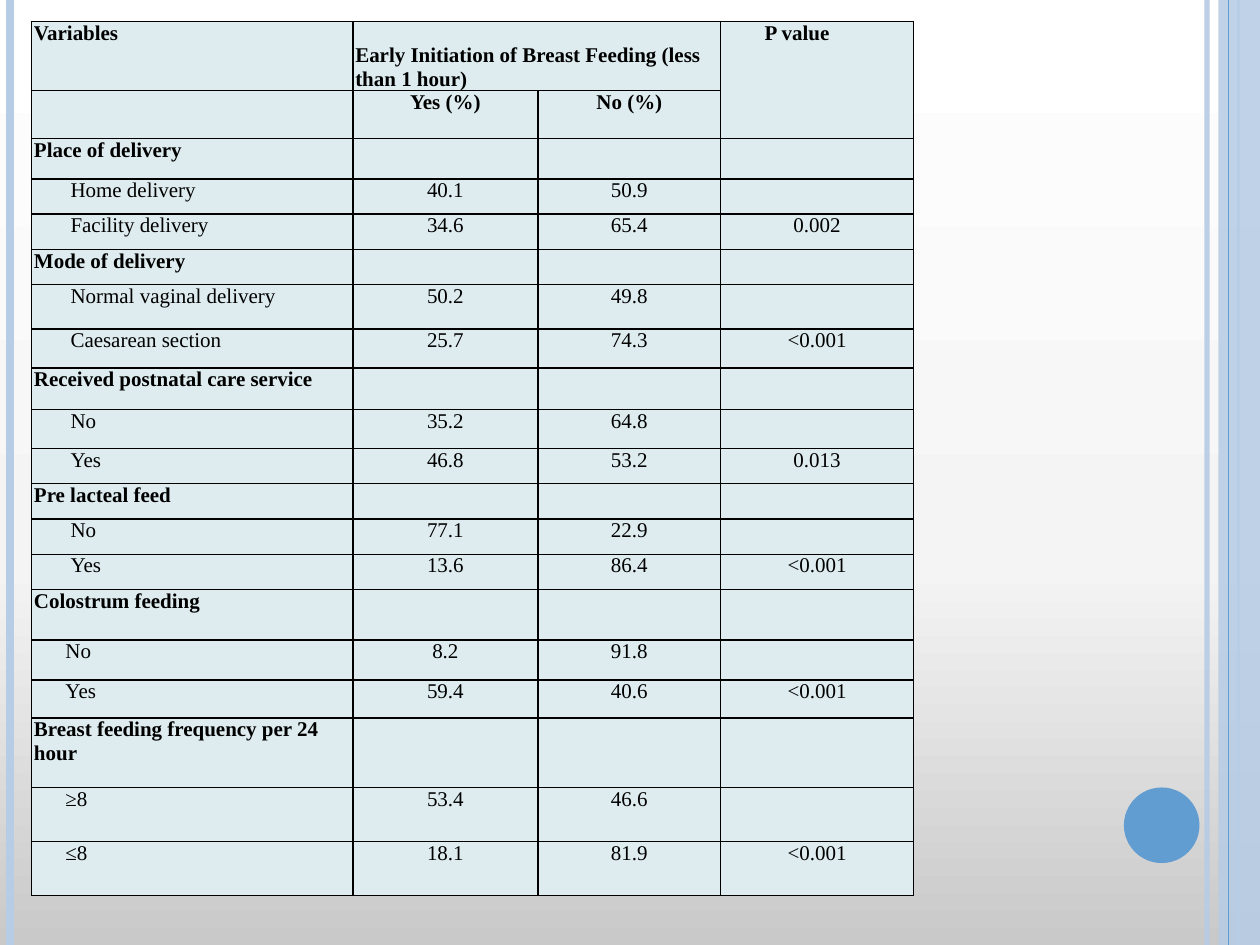
from dataclasses import dataclass

from lxml.etree import SubElement
from pptx import Presentation
from pptx.dml.color import RGBColor
from pptx.enum.shapes import MSO_CONNECTOR, MSO_SHAPE
from pptx.enum.text import MSO_ANCHOR, PP_ALIGN
from pptx.oxml import parse_xml
from pptx.oxml.ns import nsdecls, qn
from pptx.util import Inches, Pt


@dataclass(frozen=True)
class Theme:
    font: str = "Times New Roman"
    text_size: int = 12
    text: str = "000000"
    border: str = "000000"
    cell: str = "DEECEF"
    pale_blue: str = "B7CCE5"
    blue: str = "629DD1"
    background: tuple = ((0, "C9C9C9"), (40, "F4F4F4"), (100, "FFFFFF"))


THEME = Theme()
HEIGHT = 7.5
COLUMN_WIDTHS = (2.55, 1.47, 1.45, 1.53)
HEADER_HEIGHTS = (0.55, 0.38)

# Heading, its row height, indent of the answers, and
# (label, yes, no, p value, row height) for each answer
GROUPS = (
    ("Place of delivery", 0.32, 0.29, (
        ("Home delivery", "40.1", "50.9", "", 0.28),
        ("Facility delivery", "34.6", "65.4", "0.002", 0.28))),
    ("Mode of delivery", 0.28, 0.29, (
        ("Normal vaginal delivery", "50.2", "49.8", "", 0.35),
        ("Caesarean section", "25.7", "74.3", "<0.001", 0.31))),
    ("Received postnatal care service", 0.33, 0.29, (
        ("No", "35.2", "64.8", "", 0.31),
        ("Yes", "46.8", "53.2", "0.013", 0.28))),
    ("Pre lacteal feed", 0.28, 0.29, (
        ("No", "77.1", "22.9", "", 0.28),
        ("Yes", "13.6", "86.4", "<0.001", 0.28))),
    ("Colostrum feeding", 0.4, 0.25, (
        ("No", "8.2", "91.8", "", 0.32),
        ("Yes", "59.4", "40.6", "<0.001", 0.3))),
    ("Breast feeding frequency per 24 hour", 0.55, 0.25, (
        ("≥8", "53.4", "46.6", "", 0.43),
        ("≤8", "18.1", "81.9", "<0.001", 0.43))),
)


def color(value):
    return RGBColor.from_string(value)


def set_opacity(fill_parent, percent):
    color_element = fill_parent.find(qn("a:solidFill"))[0]
    SubElement(color_element, qn("a:alpha"), val=str(percent * 1000))


def set_background(slide):
    """Fill the slide with a gradient that runs from bottom to top."""
    stops = "".join(
        f'<a:gs pos="{position * 1000}"><a:srgbClr val="{value}"/></a:gs>'
        for position, value in THEME.background)
    slide.background.fill.solid()
    properties = slide.background._cSld.bg.bgPr
    properties.replace(properties[0], parse_xml(
        f'<a:gradFill {nsdecls("a")} rotWithShape="1"><a:gsLst>{stops}</a:gsLst>'
        '<a:lin ang="16200000" scaled="0"/></a:gradFill>'))


def add_vertical_line(slide, x, line_color, width, opacity=100):
    line = slide.shapes.add_connector(
        MSO_CONNECTOR.STRAIGHT, Inches(x), 0, Inches(x), Inches(HEIGHT))
    line.line.color.rgb = color(line_color)
    line.line.width = Pt(width)
    if opacity < 100:
        set_opacity(line.line._get_or_add_ln(), opacity)
    SubElement(line._element.spPr, qn("a:effectLst"))


def add_filled_shape(slide, kind, left, top, width, height, fill, opacity=100):
    shape = slide.shapes.add_shape(
        kind, Inches(left), Inches(top), Inches(width), Inches(height))
    shape.shadow.inherit = False
    shape.fill.solid()
    shape.fill.fore_color.rgb = color(fill)
    shape.line.fill.background()
    if opacity < 100:
        set_opacity(shape._element.spPr, opacity)


def format_cell(cell):
    """Give a cell its fill, margins, borders and base text size."""
    cell.fill.solid()
    cell.fill.fore_color.rgb = color(THEME.cell)
    cell.margin_left = cell.margin_right = Inches(0.02)
    cell.margin_top = cell.margin_bottom = 0
    properties = cell._tc.get_or_add_tcPr()
    for index, side in enumerate(("lnL", "lnR", "lnT", "lnB")):
        properties.insert(index, parse_xml(
            f'<a:{side} {nsdecls("a")} w="{Pt(1)}"><a:solidFill>'
            f'<a:srgbClr val="{THEME.border}"/></a:solidFill></a:{side}>'))
    # Empty cells need the small size too, or their rows grow
    end_properties = cell.text_frame.paragraphs[0]._p.get_or_add_endParaRPr()
    end_properties.set("sz", str(THEME.text_size * 100))


def write_cell(cell, text, bold=False, centered=False, indent=0):
    if not text:
        return
    paragraph = cell.text_frame.paragraphs[0]
    run = paragraph.add_run()
    run.text = text
    run.font.name = THEME.font
    run.font.size = Pt(THEME.text_size)
    run.font.bold = bold
    run.font.color.rgb = color(THEME.text)
    paragraph.alignment = PP_ALIGN.CENTER if centered else PP_ALIGN.LEFT
    if indent:
        paragraph._p.get_or_add_pPr().set("marL", str(Inches(indent)))


def write_header(table):
    write_cell(table.cell(0, 0), "Variables", bold=True)
    outcome = table.cell(0, 1)
    outcome.merge(table.cell(0, 2))
    outcome.vertical_anchor = MSO_ANCHOR.BOTTOM
    write_cell(outcome, "Early Initiation of Breast Feeding (less than 1 hour)", bold=True)
    p_value = table.cell(0, 3)
    p_value.merge(table.cell(1, 3))
    write_cell(p_value, "P value", bold=True, indent=0.33)
    for column, text in enumerate(("Yes (%)", "No (%)"), start=1):
        write_cell(table.cell(1, column), text, bold=True, centered=True)


def add_results_table(slide):
    heights = list(HEADER_HEIGHTS)
    for _, heading_height, _, answers in GROUPS:
        heights += [heading_height, *(answer[-1] for answer in answers)]
    table = slide.shapes.add_table(
        len(heights), len(COLUMN_WIDTHS), Inches(0.25), Inches(0.17),
        Inches(sum(COLUMN_WIDTHS)), Inches(sum(heights))).table
    table.first_row = table.horz_banding = False
    for column, width in zip(table.columns, COLUMN_WIDTHS):
        column.width = Inches(width)
    for row, height in zip(table.rows, heights):
        row.height = Inches(height)
    for cell in table.iter_cells():
        format_cell(cell)

    write_header(table)
    row = len(HEADER_HEIGHTS)
    for heading, _, indent, answers in GROUPS:
        write_cell(table.cell(row, 0), heading, bold=True)
        for row, (label, *values, _) in enumerate(answers, start=row + 1):
            write_cell(table.cell(row, 0), label, indent=indent)
            for column, value in enumerate(values, start=1):
                write_cell(table.cell(row, column), value, centered=True)
        row += 1


def main():
    presentation = Presentation()
    presentation.slide_width = Inches(10)
    presentation.slide_height = Inches(HEIGHT)
    slide = presentation.slides.add_slide(presentation.slide_layouts[6])
    set_background(slide)

    # Side bands and circle
    add_vertical_line(slide, 9.58, THEME.pale_blue, 3, opacity=93)
    add_vertical_line(slide, 0.08, THEME.pale_blue, 4.5)
    add_vertical_line(slide, 9.83, THEME.pale_blue, 1.5)
    add_filled_shape(slide, MSO_SHAPE.RECTANGLE, 9.67, 0, 0.33, HEIGHT,
                     THEME.pale_blue, opacity=87)
    add_vertical_line(slide, 9.75, THEME.blue, 0.75)
    add_filled_shape(slide, MSO_SHAPE.OVAL, 8.92, 6.25, 0.6, 0.6, THEME.blue)

    # Results
    add_results_table(slide)
    presentation.save("out.pptx")


if __name__ == "__main__":
    main()
